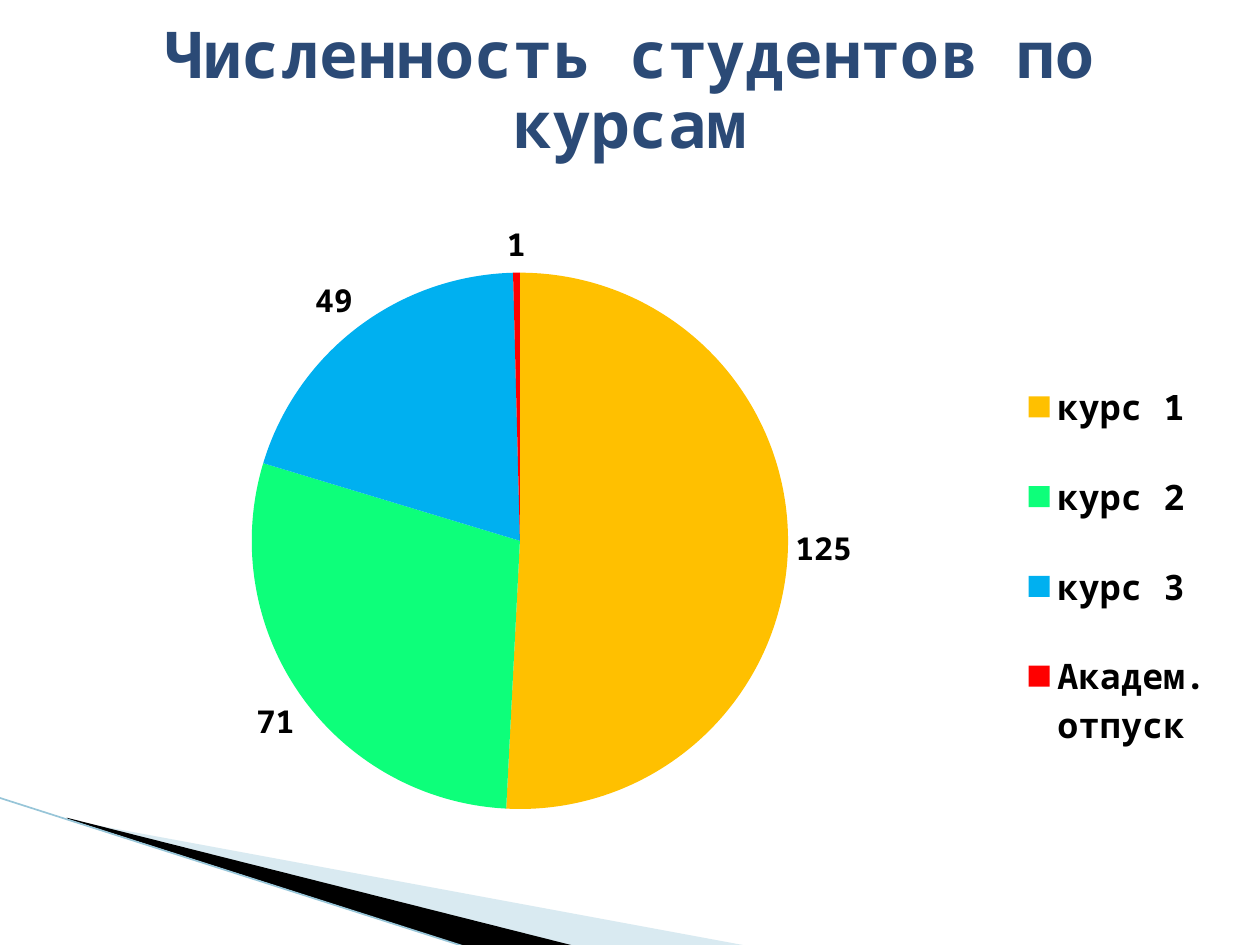
import pptx
import pptx.chart.data
import pptx.dml.color
import pptx.enum.chart
import pptx.enum.shapes
import pptx.enum.text
import pptx.oxml
import pptx.oxml.ns
import pptx.util
from pptx.util import Inches

FONT = "Noto Sans Mono"
COURSES = [
    ("курс 1", 125, "FFC000"),
    ("курс 2", 71, "0DFF7A"),
    ("курс 3", 49, "00B0F0"),
    ("Академ. отпуск", 1, "FF0000"),
]


def rgb(value):
    return pptx.dml.color.RGBColor.from_string(value)


def set_font(font, size, color):
    font.name = FONT
    font.size = pptx.util.Pt(size)
    font.bold = True
    font.color.rgb = rgb(color)


def add_wedge(slide, points, color, opacity=100):
    corners = [(x * 100, y * 100) for x, y in points]
    builder = slide.shapes.build_freeform(*corners[0], scale=Inches(0.01))
    builder.add_line_segments(corners[1:], close=True)
    wedge = builder.convert_to_shape()
    wedge.shadow.inherit = False
    wedge.line.fill.background()
    wedge.fill.solid()
    wedge.fill.fore_color.rgb = rgb(color)
    if opacity < 100:
        color_node = wedge.fill._xPr.find(".//" + pptx.oxml.ns.qn("a:srgbClr"))
        alpha = color_node.makeelement(pptx.oxml.ns.qn("a:alpha"), {"val": str(opacity * 1000)})
        color_node.append(alpha)


def add_edge(slide, start, end, color, width):
    edge = slide.shapes.add_connector(
        pptx.enum.shapes.MSO_CONNECTOR.STRAIGHT, *map(Inches, start + end))
    edge.line.color.rgb = rgb(color)
    edge.line.width = pptx.util.Pt(width)
    properties = edge._element.spPr
    properties.append(properties.makeelement(pptx.oxml.ns.qn("a:effectLst"), {}))


def set_title(slide, text):
    heading = slide.shapes.title
    heading.left, heading.top = Inches(0.5), Inches(0.3)
    heading.width, heading.height = Inches(9), Inches(1.48)
    frame = heading.text_frame
    frame.text = text
    frame.word_wrap = True
    frame.auto_size = pptx.enum.text.MSO_AUTO_SIZE.NONE
    frame.vertical_anchor = pptx.enum.text.MSO_ANCHOR.MIDDLE
    paragraph = frame.paragraphs[0]
    paragraph.alignment = pptx.enum.text.PP_ALIGN.CENTER
    paragraph.line_spacing = 0.9
    set_font(paragraph.font, 36.9, "2B4A76")


def layout_xml(x, y, width, height, target=""):
    return pptx.oxml.parse_xml(
        f'<c:layout {pptx.oxml.ns.nsdecls("c")}><c:manualLayout>{target}'
        '<c:xMode val="edge"/><c:yMode val="edge"/>'
        f'<c:x val="{x}"/><c:y val="{y}"/><c:w val="{width}"/><c:h val="{height}"/>'
        '</c:manualLayout></c:layout>')


def place(element, layout, index):
    for old in element.findall(pptx.oxml.ns.qn("c:layout")):
        element.remove(old)
    element.insert(index, layout)


def add_course_pie(slide):
    data = pptx.chart.data.CategoryChartData()
    data.categories = [name for name, _, _ in COURSES]
    data.add_series("численность студентов по курсам", [count for _, count, _ in COURSES])
    chart = slide.shapes.add_chart(
        pptx.enum.chart.XL_CHART_TYPE.PIE,
        Inches(0.5), Inches(1.62), Inches(9.3), Inches(4.95), data).chart
    chart.has_title = False
    set_font(chart.font, 10, "000000")

    chart.has_legend = True
    legend = chart.legend
    legend.position = pptx.enum.chart.XL_LEGEND_POSITION.RIGHT
    legend.include_in_layout = False
    set_font(legend.font, 20, "000000")
    place(legend._element, layout_xml(0.81, 0.22, 0.18, 0.72), 1)

    plot = chart.plots[0]
    plot.vary_by_categories = True
    for index, (_, _, color) in enumerate(COURSES):
        slice_fill = plot.series[0].points[index].format.fill
        slice_fill.solid()
        slice_fill.fore_color.rgb = rgb(color)
    labels = plot.series[0].data_labels
    labels.show_value = True
    labels.position = pptx.enum.chart.XL_LABEL_POSITION.OUTSIDE_END
    set_font(labels.font, 18, "000000")
    inner = '<c:layoutTarget val="inner"/>'
    place(chart._chartSpace.chart.plotArea, layout_xml(0.16, 0.11, 0.46, 0.86, inner), 0)


def main():
    presentation = pptx.Presentation()
    presentation.slide_width, presentation.slide_height = Inches(10), Inches(7.5)
    slide = presentation.slides.add_slide(presentation.slide_layouts[5])
    add_wedge(slide, [(0.55, 6.51), (5.95, 7.51), (4.56, 7.51), (0.55, 6.5)], "A0CBDC", 40)
    add_wedge(slide, [(0.53, 6.49), (4.57, 7.51), (3.72, 7.52), (0.54, 6.5)], "000000")
    add_edge(slide, (-0.01, 6.33), (3.71, 7.52), "97C5D8", 0.95)
    set_title(slide, "Численность студентов по курсам\v")
    add_course_pie(slide)
    presentation.save("out.pptx")


if __name__ == "__main__":
    main()
